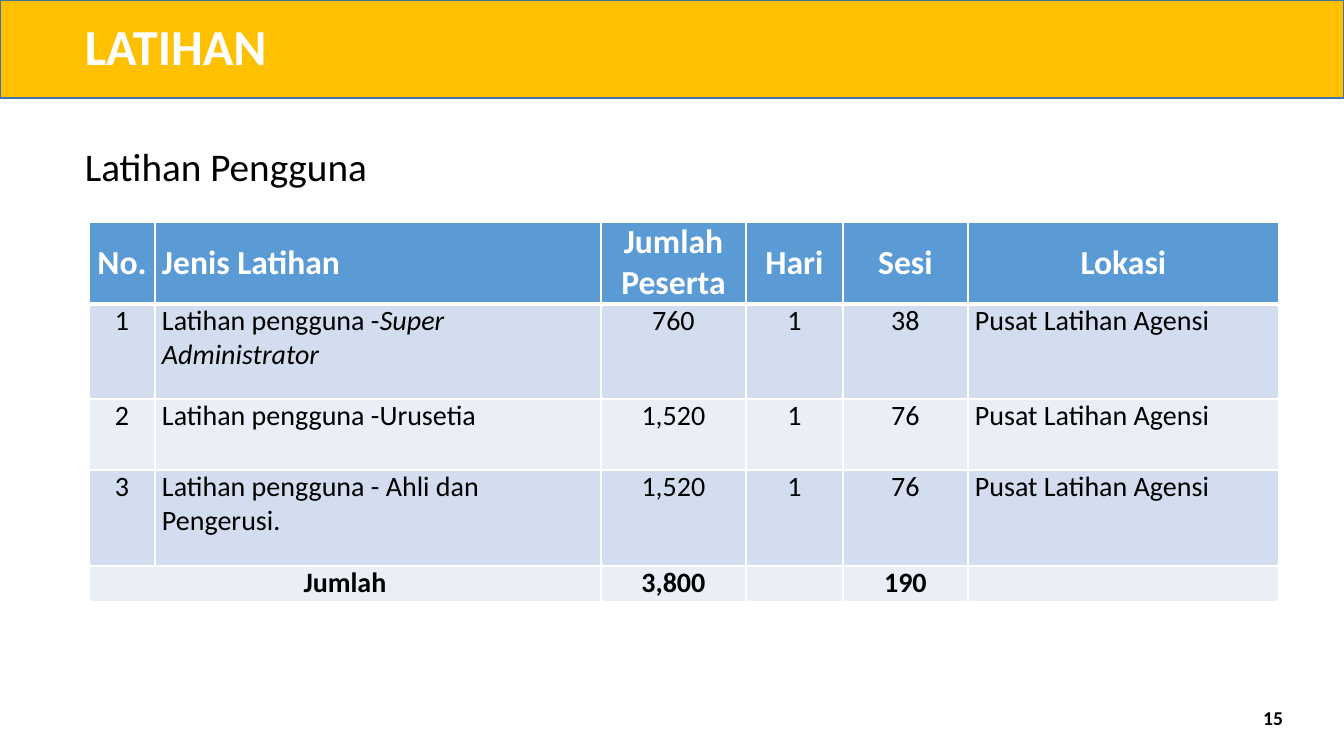
from lxml.etree import SubElement
from pptx import Presentation
from pptx.dml.color import RGBColor
from pptx.enum.shapes import MSO_SHAPE
from pptx.enum.text import MSO_ANCHOR, PP_ALIGN
from pptx.oxml.ns import qn
from pptx.util import Pt

# Content
TITLE = "LATIHAN"
SUBTITLE = "Latihan Pengguna"
PAGE_NUMBER = "15"
HEADINGS = ["No.", "Jenis Latihan", "Jumlah Peserta", "Hari", "Sesi", "Lokasi"]
VENUE = "Pusat Latihan Agensi"
# A training type is its plain part and its italic part
SESSIONS = [
    ("1", ("Latihan pengguna -", "Super Administrator"), "760", "1", "38", VENUE),
    ("2", ("Latihan pengguna -Urusetia", ""), "1,520", "1", "76", VENUE),
    ("3", ("Latihan pengguna - Ahli dan Pengerusi.", ""), "1,520", "1", "76", VENUE),
]
TOTALS = ["Jumlah", "", "3,800", "", "190", ""]

# Layout in px
PX = 914400 / 100.8
SLIDE_W, SLIDE_H = 1344, 756
TABLE_LEFT, TABLE_TOP = 89, 222
COLUMN_WIDTHS = [66, 446, 145, 97, 125, 311]
ROW_HEIGHTS = [82, 95, 71, 96, 36]
CELL_INSET = 7
TYPE_COLUMN, VENUE_COLUMN = 1, 5

# Style
FONT = "Calibri"
WHITE, BLACK = "FFFFFF", "000000"
BANNER_FILL, BANNER_LINE = "FFC000", "43739E"
HEADER_FILL, BANDS = "5B9BD5", ("D2DEEF", "EAEFF7")


def px(length):
    return round(length * PX)


def color(value):
    return RGBColor.from_string(value)


def add_run(paragraph, text, size, ink=BLACK, bold=False, italic=False):
    run = paragraph.add_run()
    run.text = text
    font = run.font
    font.name, font.size, font.bold, font.italic = FONT, Pt(size), bold, italic
    font.color.rgb = color(ink)
    return run


def add_text(slide, box, text, size, align, anchor=MSO_ANCHOR.TOP, spacing=1.0, **look):
    frame = slide.shapes.add_textbox(*map(px, box)).text_frame
    frame.word_wrap = True
    frame.vertical_anchor = anchor
    paragraph = frame.paragraphs[0]
    paragraph.alignment = align
    paragraph.line_spacing = spacing
    return add_run(paragraph, text, size, **look)


def add_text_shadow(run):
    effects = SubElement(run.font._element, qn("a:effectLst"))
    shadow = SubElement(effects, qn("a:outerShdw"), blurRad="38100", dist="38100",
                        dir="2700000", algn="tl")
    ink = SubElement(shadow, qn("a:srgbClr"), val=BLACK)
    SubElement(ink, qn("a:alpha"), val="43000")
    # Effects come before the typeface
    run.font._element.find(qn("a:latin")).addprevious(effects)


def add_borders(cell, top, bottom):
    properties = cell._tc.get_or_add_tcPr()
    for side, points in (("lnL", 1), ("lnR", 1), ("lnT", top), ("lnB", bottom)):
        line = SubElement(properties, qn(f"a:{side}"), w=str(Pt(points)))
        SubElement(SubElement(line, qn("a:solidFill")), qn("a:srgbClr"), val=WHITE)


def add_training_table(slide):
    rows = [HEADINGS, *SESSIONS, TOTALS]
    last = len(rows) - 1
    table = slide.shapes.add_table(
        len(rows), len(HEADINGS), px(TABLE_LEFT), px(TABLE_TOP),
        px(sum(COLUMN_WIDTHS)), px(sum(ROW_HEIGHTS))).table
    for column, width in zip(table.columns, COLUMN_WIDTHS):
        column.width = px(width)
    for row, height in zip(table.rows, ROW_HEIGHTS):
        row.height = px(height)
    table.cell(last, 0).merge(table.cell(last, 1))

    for r, values in enumerate(rows):
        header = r == 0
        for c, value in enumerate(values):
            cell = table.cell(r, c)
            add_borders(cell, 3 if r == 1 else 1, 3 if header else 1)
            cell.fill.solid()
            cell.fill.fore_color.rgb = color(HEADER_FILL if header else BANDS[(r - 1) % 2])
            cell.margin_left = cell.margin_right = px(CELL_INSET)
            cell.margin_top = cell.margin_bottom = 0
            cell.vertical_anchor = MSO_ANCHOR.MIDDLE if header else MSO_ANCHOR.TOP
            paragraph = cell.text_frame.paragraphs[0]
            left = c == TYPE_COLUMN or (c == VENUE_COLUMN and not header)
            paragraph.alignment = PP_ALIGN.LEFT if left else PP_ALIGN.CENTER
            plain, italic = value if isinstance(value, tuple) else (value, "")
            for text, slanted in ((plain, False), (italic, True)):
                if text:
                    add_run(paragraph, text, 24 if header else 20,
                            WHITE if header else BLACK, r in (0, last), slanted)


def main():
    deck = Presentation()
    deck.slide_width, deck.slide_height = px(SLIDE_W), px(SLIDE_H)
    slide = deck.slides.add_slide(deck.slide_layouts[6])

    # Banner and title
    banner = slide.shapes.add_shape(MSO_SHAPE.RECTANGLE, 0, 0, px(SLIDE_W), px(98))
    banner.shadow.inherit = False
    banner.fill.solid()
    banner.fill.fore_color.rgb = color(BANNER_FILL)
    banner.line.color.rgb = color(BANNER_LINE)
    banner.line.width = Pt(1)
    title = add_text(slide, (75, 1, 927, 97), TITLE, 36, PP_ALIGN.LEFT,
                     MSO_ANCHOR.MIDDLE, 0.9, ink=WHITE, bold=True)
    add_text_shadow(title)

    # Subtitle, table and page number
    add_text(slide, (75, 143, 1218, 530), SUBTITLE, 28, PP_ALIGN.JUSTIFY, spacing=0.9)
    add_training_table(slide)
    add_text(slide, (1002, 701, 291, 40), PAGE_NUMBER, 14, PP_ALIGN.RIGHT, bold=True)

    deck.save("out.pptx")


if __name__ == "__main__":
    main()
